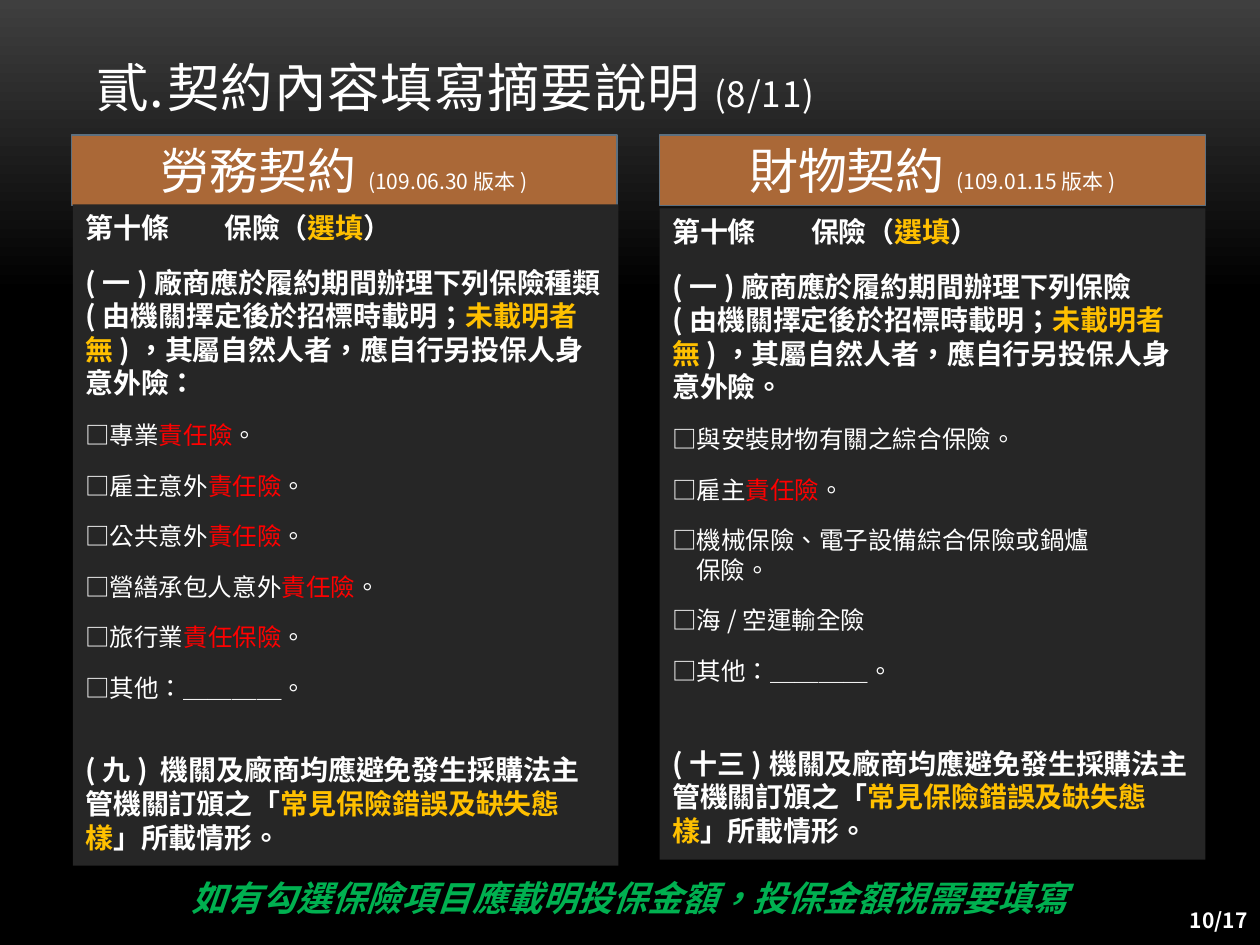
from pptx import Presentation
from pptx.dml.color import RGBColor
from pptx.enum.shapes import MSO_SHAPE as Preset
from pptx.enum.text import MSO_ANCHOR as Anchor, PP_ALIGN as Align
from pptx.oxml.ns import qn
from pptx.util import Cm, Pt
from lxml.etree import SubElement

FONT = "Noto Sans CJK SC"
WHITE, GOLD, RED, GREEN = "FFFFFF", "FFC000", "FF0000", "00B050"
BROWN, SLATE, CHARCOAL = "AA6837", "5D7080", "262626"


def color(value):
    return RGBColor.from_string(value)


def add_run(paragraph, text, size, tint=WHITE, bold=False, italic=False, spacing=0):
    for index, line in enumerate(text.split("\n")):
        if index:
            paragraph.add_line_break()
        run = paragraph.add_run()
        run.text = line
        font = run.font
        font.size, font.bold, font.italic, font.name = Pt(size), bold, italic, FONT
        font.color.rgb = color(tint)
        properties = run._r.get_or_add_rPr()
        properties.set("lang", "zh-TW")
        if spacing:
            properties.set("spc", str(spacing))
        SubElement(properties, qn("a:ea"), typeface=FONT)


def add_text_box(slide, box, anchor=Anchor.TOP, align=Align.LEFT):
    frame = slide.shapes.add_textbox(*map(Cm, box)).text_frame
    frame.word_wrap = True
    frame.vertical_anchor = anchor
    paragraph = frame.paragraphs[0]
    paragraph.alignment = align
    return paragraph


def add_panel(slide, box, fill, line=None, anchor=Anchor.TOP):
    shape = slide.shapes.add_shape(Preset.RECTANGLE, *map(Cm, box))
    shape.shadow.inherit = False
    shape.fill.solid()
    shape.fill.fore_color.rgb = color(fill)
    if line:
        shape.line.color.rgb = color(line)
        shape.line.width = Pt(0.85)
    else:
        shape.line.fill.background()
    frame = shape.text_frame
    frame.word_wrap = True
    frame.vertical_anchor = anchor
    return frame


def set_indent(paragraph, hanging):
    properties = paragraph._p.get_or_add_pPr()
    properties.set("marL", str(Cm(hanging)))
    properties.set("indent", str(-Cm(hanging)))
    return properties


def add_title(slide, box):
    paragraph = add_text_box(slide, box, Anchor.BOTTOM)
    properties = set_indent(paragraph, 1.43)
    SubElement(properties, qn("a:buFont"), typeface="+mj-lt")
    SubElement(properties, qn("a:buAutoNum"), type="ea1ChtPeriod", startAt="2")
    add_run(paragraph, "契約內容填寫摘要說明", 30, spacing=50)
    add_run(paragraph, "(8/11)", 20, spacing=50)


def add_heading(slide, box, name, version):
    paragraph = add_panel(slide, box, BROWN, SLATE, Anchor.MIDDLE).paragraphs[0]
    paragraph.alignment = Align.CENTER
    add_run(paragraph, name, 28)
    add_run(paragraph, version, 12)


def add_clauses(slide, box, intro, options, closing, closing_gap):
    frame = add_panel(slide, box, CHARCOAL)

    def fill_paragraph(paragraph, parts, size, bold, accent, before=0, after=0):
        paragraph.alignment = Align.LEFT
        paragraph.space_before, paragraph.space_after = Pt(before), Pt(after)
        for index, text in enumerate(parts):
            add_run(paragraph, text, size, accent if index % 2 else WHITE, bold)

    article = frame.paragraphs[0]
    tabs = SubElement(article._p.get_or_add_pPr(), qn("a:tabLst"))
    SubElement(tabs, qn("a:tab"), pos=str(Cm(2.8)), algn="l")
    fill_paragraph(article, ("第十條\t保險（", "選填", "）"), 16, True, GOLD)
    fill_paragraph(frame.add_paragraph(), intro, 16, True, GOLD, 12, 6)
    for parts in options:
        option = frame.add_paragraph()
        set_indent(option, 0.49)
        fill_paragraph(option, parts, 14, False, RED, 6, 6)
    option.space_after = Pt(23)
    ending = (closing, "常見保險錯誤及缺失態樣", "」所載情形。")
    fill_paragraph(frame.add_paragraph(), ending, 16, True, GOLD, closing_gap, 6)


def add_footer(slide, note_box, number_box):
    note = add_text_box(slide, note_box, align=Align.CENTER)
    add_run(note, "如有勾選保險項目應載明投保金額，投保金額視需要填寫", 20, GREEN, True, True)
    number = add_text_box(slide, number_box, Anchor.MIDDLE, Align.RIGHT)
    add_run(number, "10/17", 12, bold=True)


def set_background(slide):
    fill = slide.background.fill
    fill.gradient()
    fill.gradient_angle = 270
    for stop, position, tint in zip(fill.gradient_stops, (0, 0.31), ("3F3F3F", "000000")):
        stop.position = position
        stop.color.rgb = color(tint)


def main():
    presentation = Presentation()
    presentation.slide_width, presentation.slide_height = Cm(25.4), Cm(19.05)
    slide = presentation.slides.add_slide(presentation.slide_layouts[6])
    set_background(slide)
    add_title(slide, (1.7, 0.76, 22.02, 1.75))
    add_heading(slide, (1.44, 2.72, 11, 1.42), "勞務契約", "(109.06.30版本)")
    add_heading(slide, (13.3, 2.72, 11, 1.42), "財物契約", "(109.01.15版本)")
    add_clauses(
        slide, (1.47, 4.12, 11, 13.33),
        ("(一)廠商應於履約期間辦理下列保險種類(由機關擇定後於招標時載明；",
         "未載明者無", ")，其屬自然人者，應自行另投保人身意外險："),
        [("□專業", "責任險", "。"),
         ("□雇主意外", "責任險", "。"),
         ("□公共意外", "責任險", "。"),
         ("□營繕承包人意外", "責任險", "。"),
         ("□旅行業", "責任保險", "。"),
         ("□其他：＿＿＿＿。",)],
        "(九) 機關及廠商均應避免發生採購法主管機關訂頒之「", 6)
    add_clauses(
        slide, (13.3, 4.2, 11, 13.13),
        ("(一)廠商應於履約期間辦理下列保險\n(由機關擇定後於招標時載明；",
         "未載明者無", ")，其屬自然人者，應自行另投保人身意外險。"),
        [("□與安裝財物有關之綜合保險。",),
         ("□雇主", "責任險", "。"),
         ("□機械保險、電子設備綜合保險或鍋爐\n保險。",),
         ("□海/空運輸全險",),
         ("□其他：＿＿＿＿。",)],
        "(十三)機關及廠商均應避免發生採購法主管機關訂頒之「", 12)
    add_footer(slide, (0, 17.55, 25.4, 1.12), (22.66, 18.03, 2.74, 1.02))
    presentation.save("out.pptx")


if __name__ == "__main__":
    main()
